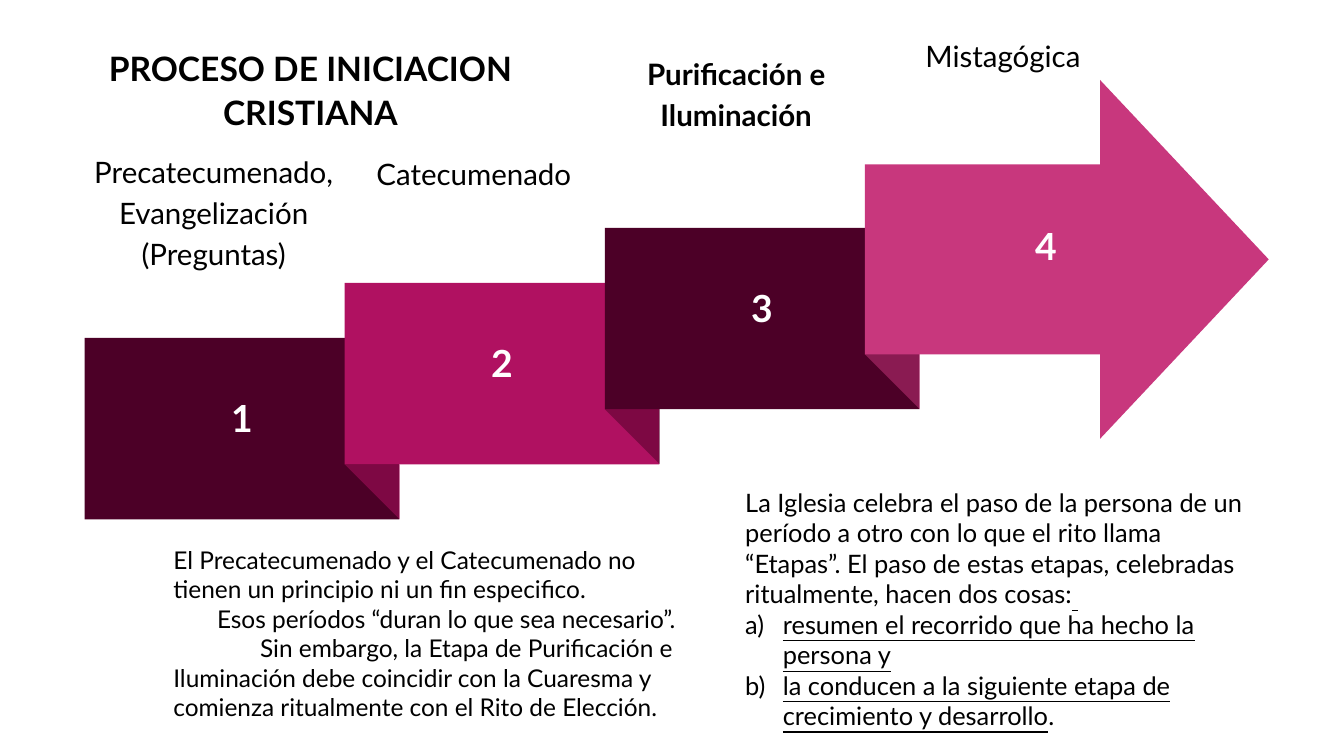
"""Build a slide on the stages of Christian initiation as a rising folded ribbon."""
from lxml import etree
from pptx import Presentation, util as u
from pptx.dml.color import RGBColor
from pptx.enum import shapes, text
from pptx.oxml.ns import qn

COLORS = {"wine": "4C0027", "magenta": "B01161", "pink": "C8377D", "black": "000000", "white": "FFFFFF"}
FONT = "Lato"

TITLE = "PROCESO DE INICIACION CRISTIANA"
STAGE_COLORS = ["wine", "magenta", "wine", "pink"]
LABELS = [
    ("Precatecumenado, Evangelización (Preguntas)", (1.26, 2.2, 3.84, 1.79), False),
    ("Catecumenado", (5.32, 2.24, 3.46, 0.55), False),
    ("Purificación e Iluminación", (9.41, 0.74, 3.09, 1.17), True),
    ("Mistagógica", (13.67, 0.48, 2.51, 0.55), False),
]
PERIODS = [
    {"runs": [("El Precatecumenado y el Catecumenado no tienen un principio ni un fin especifico.", False)]},
    {"runs": [("Esos períodos “duran lo que sea necesario”.", False)], "indent": 0.65},
    {"runs": [("Sin embargo, la Etapa de Purificación e Iluminación debe coincidir con la Cuaresma "
               "y comienza ritualmente con el Rito de Elección.", False)], "indent": 1.29},
]
STEPS = [
    {"runs": [("La Iglesia celebra el paso de la persona de un período a otro con lo que el rito llama "
               "“Etapas”. El paso de estas etapas, celebradas ritualmente, hacen dos cosas:", False),
              (" ", True)]},
    {"runs": [("resumen el recorrido que ha hecho la persona y", True)],
     "margin": 0.56, "indent": -0.56, "numbered": True},
    {"runs": [("la conducen a la siguiente etapa de crecimiento y desarrollo", True), (".", False)],
     "margin": 0.56, "indent": -0.56, "numbered": True},
]

LEFT, TOP, STEP, FOLD = 1.26, 5.03, 3.87, 0.82
BLOCK_WIDTH, BLOCK_HEIGHT = 4.68, 2.7
ARROW = (12.87, 1.19, 6.01, 5.34)


def write_text(shape, content, size, spacing, color="black", bold=False, align="LEFT",
               anchor="TOP", inset=0, grow=True):
    """Fill a shape with a string or a list of paragraph dicts."""
    frame = shape.text_frame
    frame.word_wrap = True
    frame.auto_size = text.MSO_AUTO_SIZE.SHAPE_TO_FIT_TEXT if grow else text.MSO_AUTO_SIZE.NONE
    frame.vertical_anchor = text.MSO_ANCHOR[anchor]
    frame.margin_left = frame.margin_top = frame.margin_right = frame.margin_bottom = u.Inches(inset)
    paragraphs = [{"runs": [(content, False)]}] if isinstance(content, str) else content
    for index, item in enumerate(paragraphs):
        paragraph = frame.add_paragraph() if index else frame.paragraphs[0]
        paragraph.alignment = text.PP_ALIGN[align]
        paragraph.line_spacing = u.Pt(spacing)
        paragraph.space_before = u.Pt(0)
        properties = paragraph._p.get_or_add_pPr()
        properties.set("marL", str(u.Inches(item.get("margin", 0))))
        properties.set("indent", str(u.Inches(item.get("indent", 0))))
        if item.get("numbered"):
            etree.SubElement(properties, qn("a:buAutoNum"), type="alphaLcParenR")
        for words, underlined in item["runs"]:
            run = paragraph.add_run()
            run.text = words
            font = run.font
            font.name, font.size, font.bold = FONT, u.Pt(size), bold
            font.underline = underlined
            font.color.rgb = RGBColor.from_string(COLORS[color])


def add_box(slide, box, content, **style):
    """Add a text box holding formatted text."""
    write_text(slide.shapes.add_textbox(*map(u.Inches, box)), content, **style)


def add_filled(slide, kind, box, color, opacity=100):
    """Add a preset shape with a plain fill and no line."""
    shape = slide.shapes.add_shape(shapes.MSO_SHAPE[kind], *map(u.Inches, box))
    shape.shadow.inherit = False
    shape.line.fill.background()
    shape.fill.solid()
    shape.fill.fore_color.rgb = RGBColor.from_string(COLORS[color])
    if opacity < 100:
        fill_color = shape._element.spPr.find(qn("a:solidFill"))[0]
        etree.SubElement(fill_color, qn("a:alpha"), val=str(opacity * 1000))
    return shape


def add_ribbon(slide):
    """Draw the rising blocks, the arrow and the folds that join them."""
    number_style = dict(size=40, spacing=56, color="white", bold=True, align="CENTER",
                        anchor="MIDDLE", inset=0.06, grow=False)
    *blocks, arrow_color = STAGE_COLORS
    for index, color in enumerate(blocks):
        left, top = LEFT + index * STEP, TOP - index * FOLD
        add_filled(slide, "RECTANGLE", (left, top, BLOCK_WIDTH, BLOCK_HEIGHT), color)
        add_box(slide, (left, top - 0.43, BLOCK_WIDTH, BLOCK_HEIGHT + 0.43), str(index + 1), **number_style)
    arrow = add_filled(slide, "RIGHT_ARROW", ARROW, arrow_color)
    arrow.adjustments[0], arrow.adjustments[1] = 0.53, 0.47
    add_box(slide, (ARROW[0], 1.91, 5.39, 3.37), str(len(STAGE_COLORS)), **number_style)
    for index, color in enumerate(STAGE_COLORS[1:]):
        top = TOP + BLOCK_HEIGHT - (index + 1) * FOLD
        fold = add_filled(slide, "RIGHT_TRIANGLE", (LEFT + (index + 1) * STEP, top, FOLD, FOLD), color, 50)
        fold.rotation = 180


def main():
    """Compose and save the slide."""
    presentation = Presentation()
    presentation.slide_width, presentation.slide_height = u.Inches(20), u.Inches(11.25)
    slide = presentation.slides.add_slide(presentation.slide_layouts[5])
    title = slide.shapes.title
    title.left, title.top, title.width, title.height = map(u.Inches, (0.96, 0.66, 7.32, 1.25))
    write_text(title, TITLE, size=36, spacing=47.2, bold=True, align="CENTER")
    add_ribbon(slide)
    for label, box, bold in LABELS:
        add_box(slide, box, label, size=31.6, spacing=44.2, bold=bold, align="CENTER")
    add_box(slide, (2.58, 8.11, 7.67, 2.61), PERIODS, size=26.2, spacing=31.5)
    add_box(slide, (11.09, 7.25, 7.67, 3.66), STEPS, size=27.2, spacing=32.6)
    presentation.save("out.pptx")


if __name__ == "__main__":
    main()
